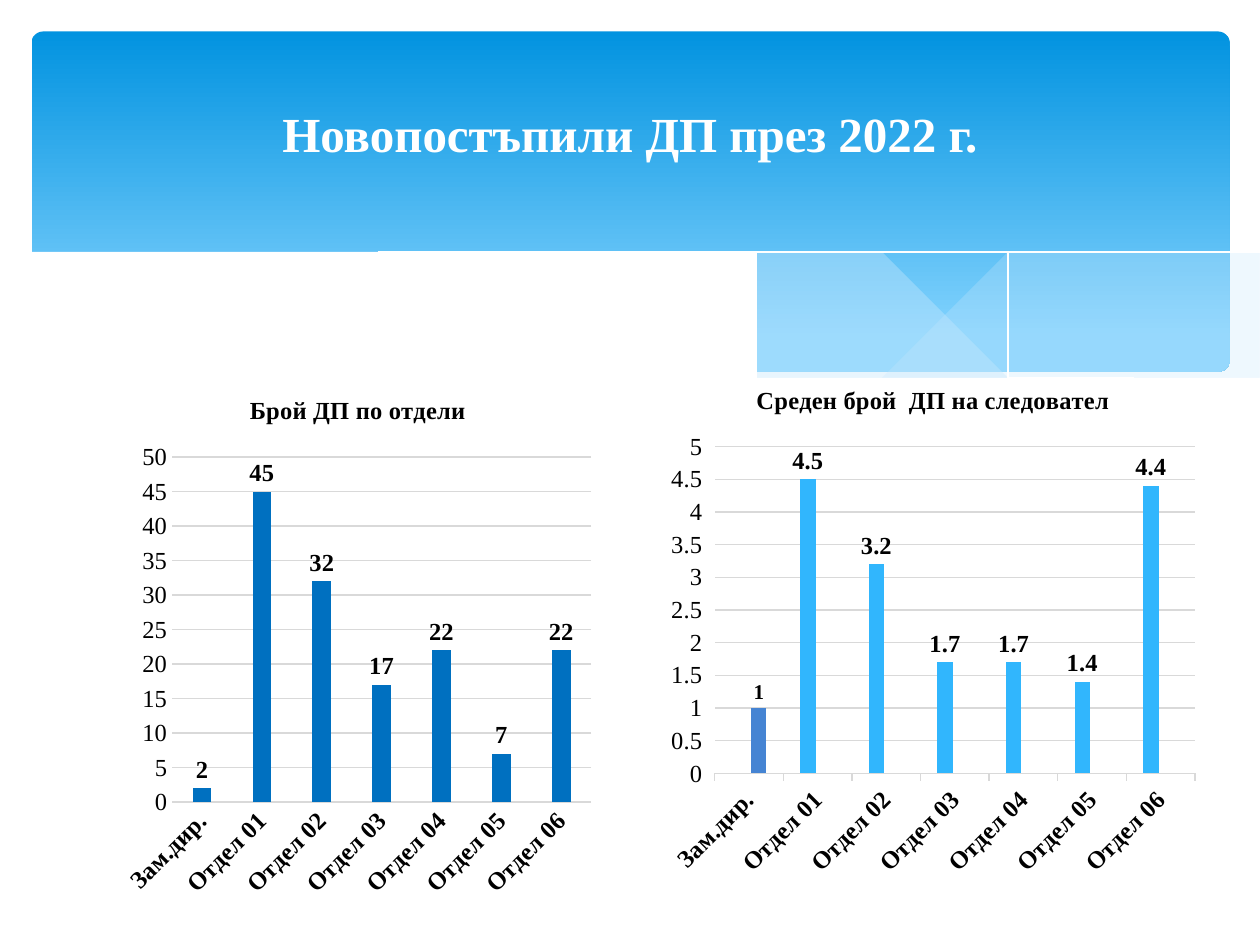
from dataclasses import dataclass
from typing import Optional

from pptx import Presentation
from pptx.chart.data import CategoryChartData as ChartData
from pptx.dml.color import RGBColor as RGB
from pptx.enum.chart import XL_CHART_TYPE as Kind
from pptx.enum.chart import XL_LABEL_POSITION as Spot
from pptx.enum.chart import XL_TICK_MARK as Tick
from pptx.enum.shapes import MSO_SHAPE as Preset
from pptx.enum.text import MSO_ANCHOR as Anchor
from pptx.enum.text import PP_ALIGN as Align
from pptx.oxml.ns import qn
from pptx.util import Inches, Pt
from lxml.etree import SubElement

Point = tuple[float, float]


@dataclass(frozen=True)
class Theme:
    font: str = "Times New Roman"
    head: int = 28
    text: int = 14
    small: int = 12
    white: str = "FFFFFF"
    black: str = "000000"
    grid: str = "D9D9D9"
    top: str = "0293E0"
    base: str = "83D3FE"
    pale: str = "C6E7FC"
    navy: str = "0070C0"
    sky: str = "31B6FD"
    steel: str = "4584D3"


@dataclass(frozen=True)
class Wave:
    arcs: list[list[Point]]
    fill: Optional[str] = None
    alpha: int = 100


@dataclass(frozen=True)
class Series:
    name: str
    color: str
    size: int
    vals: list[Optional[float]]


@dataclass(frozen=True)
class Graph:
    title: str
    box: tuple[float, float, float, float]
    top: float
    unit: float
    tick: Tick
    rows: list[Series]


THEME = Theme()
UNITS = ["Зам.дир."] + [f"Отдел {n:02}" for n in range(1, 7)]

WAVES = [
    Wave([[(9.76, 2), (9.35, 2.07), (8.91, 2.16), (8.32, 2.3), (7.53, 2.48), (6.61, 2.65)],
          [(6.61, 2.65), (7.19, 2.72), (7.69, 2.77), (8.14, 2.78), (8.63, 2.75),
           (9.05, 2.69), (9.42, 2.59), (9.76, 2.47)]], THEME.pale, 29),
    Wave([[(8.93, 2.73), (8.07, 2.6), (7.06, 2.4), (6.29, 2.22), (5.55, 2.05),
           (4.89, 1.94), (4.2, 1.87), (3.61, 1.85), (2.86, 1.91)],
          [(2.86, 1.91), (3.62, 2.03), (4.49, 2.22), (5.3, 2.4), (6.01, 2.55),
           (6.8, 2.68), (7.48, 2.76), (8.18, 2.78), (8.93, 2.73)]], THEME.pale, 40),
    Wave([[(3.09, 1.95), (3.53, 1.89), (4.16, 1.87), (4.89, 1.9), (5.56, 1.97),
           (6.36, 2.08), (7.27, 2.26), (8.31, 2.51), (9.07, 2.72)]]),
    Wave([[(6.13, 2.57), (6.72, 2.41), (7.48, 2.23), (8.36, 2.04), (9.1, 1.92), (9.75, 1.85)]]),
    Wave([[(9.77, 2.46), (8.99, 2.69), (8.09, 2.77), (7.26, 2.72), (6.26, 2.58),
           (5.29, 2.39), (4.47, 2.2), (3.4, 1.97), (2.5, 1.86), (1.77, 1.84),
           (1.06, 1.89), (0.59, 1.99), (0.23, 2.13)],
          [(0.23, 3.29), (9.77, 3.29)]], THEME.white),
]

GRAPHS = [
    Graph("Среден брой  ДП на следовател", (5.24, 2.88, 4.33, 4.16), 5, 0.5, Tick.OUTSIDE, [
        Series("Series 1", THEME.sky, THEME.text, [None, 4.5, 3.2, 1.7, 1.7, 1.4, 4.4]),
        Series("Series 2", THEME.steel, THEME.small, [1] + [None] * 6)]),
    Graph("Брой ДП по отдели", (0.91, 2.96, 3.86, 4.25), 50, 5, Tick.NONE, [
        Series("Series 1", THEME.navy, THEME.text, [2, 45, 32, 17, 22, 7, 22])]),
]


def rgb(code: str) -> RGB:
    return RGB.from_string(code)


def style(font, size: int, color: str = THEME.black, bold: bool = True) -> None:
    font.name, font.size, font.bold = THEME.font, Pt(size), bold
    font.color.rgb = rgb(color)


def smooth(knots: list[Point], steps: int = 6) -> list[Point]:
    """Run a Catmull-Rom curve through the knots."""
    ends = [knots[0], *knots, knots[-1]]
    curve = [knots[0]]
    for a, b, c, d in zip(ends, ends[1:], ends[2:], ends[3:]):
        for t in (n / steps for n in range(1, steps + 1)):
            curve.append(tuple(
                (2 * q + (r - p) * t + (2 * p - 5 * q + 4 * r - s) * t ** 2
                 + (3 * q - p - 3 * r + s) * t ** 3) / 2
                for p, q, r, s in zip(a, b, c, d)))
    return curve


def add_band(shapes) -> None:
    band = shapes.add_shape(Preset.ROUNDED_RECTANGLE, Inches(0.25), Inches(0.25),
                            Inches(9.51), Inches(2.7))
    band.adjustments[0] = 0.034
    band.shadow.inherit = False
    band.line.fill.background()
    band.fill.gradient()
    band.fill.gradient_angle = 270
    for stop, place, color in zip(band.fill.gradient_stops, (0, 0.9), (THEME.top, THEME.base)):
        stop.position = place
        stop.color.rgb = rgb(color)


def add_wave(shapes, wave: Wave) -> None:
    start, *rest = [point for arc in wave.arcs for point in smooth(arc)]
    pen = shapes.build_freeform(*start, scale=Inches(1))
    pen.add_line_segments(rest, close=wave.fill is not None)
    shape = pen.convert_to_shape()
    shape.shadow.inherit = False
    if wave.fill is None:
        shape.fill.background()
        shape.line.color.rgb = rgb(THEME.white)
        shape.line.width = Pt(0)
        return
    shape.line.fill.background()
    shape.fill.solid()
    shape.fill.fore_color.rgb = rgb(wave.fill)
    if wave.alpha < 100:
        tint = next(shape.element.spPr.iter(qn("a:srgbClr")))
        SubElement(tint, qn("a:alpha")).set("val", str(wave.alpha * 1000))


def add_title(slide, text: str) -> None:
    title = slide.shapes.title
    title.left, title.top, title.width, title.height = map(Inches, (0.5, 0.37, 9, 1.37))
    frame = title.text_frame
    frame.text = text
    frame.vertical_anchor = Anchor.MIDDLE
    frame.paragraphs[0].alignment = Align.CENTER
    style(frame.paragraphs[0].runs[0].font, THEME.head, THEME.white)
    slide.shapes.element.append(title.element)  # in front of the waves


def add_graph(shapes, graph: Graph) -> None:
    data = ChartData()
    data.categories = UNITS
    for row in graph.rows:
        data.add_series(row.name, row.vals)
    chart = shapes.add_chart(Kind.COLUMN_CLUSTERED, *map(Inches, graph.box), data).chart
    style(chart.font, THEME.small)
    chart.has_legend = False
    chart.has_title = True
    head = chart.chart_title.text_frame
    head.text = graph.title
    style(head.paragraphs[0].runs[0].font, THEME.text)

    cat, val = chart.category_axis, chart.value_axis
    for axis in (cat, val):
        axis.major_tick_mark, axis.minor_tick_mark = graph.tick, Tick.NONE
        style(axis.tick_labels.font, THEME.text, bold=axis is cat)
    cat._element.txPr.find(qn("a:bodyPr")).set("rot", "-2700000")
    val.minimum_scale, val.maximum_scale, val.major_unit = 0, graph.top, graph.unit
    val.format.line.fill.background()
    for line in (cat.format.line, val.major_gridlines.format.line):
        line.color.rgb = rgb(THEME.grid)
        line.width = Pt(0.75)

    plot = chart.plots[0]
    plot.gap_width, plot.overlap, plot.vary_by_categories = 219, -27, False
    for bars, row in zip(plot.series, graph.rows):
        bars.format.fill.solid()
        bars.format.fill.fore_color.rgb = rgb(row.color)
        labels = bars.data_labels
        labels.show_value = True
        labels.position = Spot.OUTSIDE_END
        style(labels.font, row.size)


def main() -> None:
    deck = Presentation()
    deck.slide_width, deck.slide_height = Inches(10), Inches(7.5)
    slide = deck.slides.add_slide(deck.slide_layouts[5])
    add_band(slide.shapes)
    for wave in WAVES:
        add_wave(slide.shapes, wave)
    add_title(slide, "Новопостъпили ДП през 2022 г.")
    for graph in GRAPHS:
        add_graph(slide.shapes, graph)
    deck.save("out.pptx")


if __name__ == "__main__":
    main()
